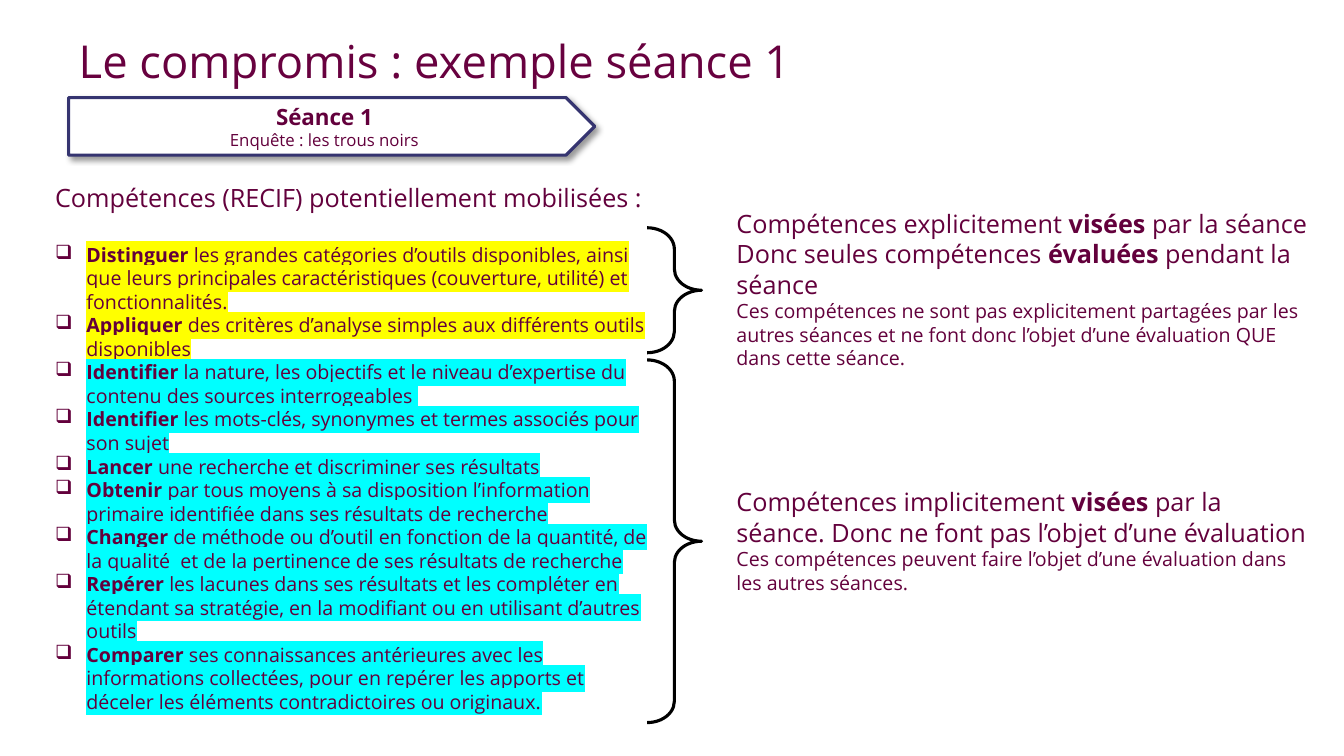
from lxml import etree
from pptx import Presentation
from pptx import util as u
from pptx.dml.color import RGBColor
from pptx.enum import shapes, text
from pptx.oxml.ns import qn

FONT = "Open Sans"
PLUM, TITLE_PLUM = "63003C", "68013F"
NAVY, BLACK, WHITE = "353470", "000000", "FFFFFF"
YELLOW, CYAN = "FFFF00", "00FFFF"

# Words between ** are bold
TARGETED = [
    "**Distinguer **les grandes catégories d’outils disponibles, ainsi que leurs "
    "principales caractéristiques (couverture, utilité) et fonctionnalités.",
    "**Appliquer **des critères d’analyse simples aux différents outils disponibles",
]
IMPLICIT = [
    "**Identifier **la nature, les objectifs et le niveau d’expertise du contenu "
    "des sources interrogeables ",
    "**Identifier **les mots-clés, synonymes et termes associés pour son sujet",
    "**Lancer **une recherche et discriminer ses résultats",
    "**Obtenir **par tous moyens à sa disposition l’information primaire identifiée "
    "dans ses résultats de recherche",
    "**Changer **de méthode ou d’outil en fonction de la quantité, de la qualité  et "
    "de la pertinence de ses résultats de recherche",
    "**Repérer **les lacunes dans ses résultats et les compléter en étendant sa "
    "stratégie, en la modifiant ou en utilisant d’autres outils",
    "**Comparer **ses connaissances antérieures avec les informations collectées, "
    "pour en repérer les apports et déceler les éléments contradictoires ou originaux.",
]
TARGETED_NOTE = [
    ("Compétences explicitement **visées** par la séance", 18),
    ("Donc seules compétences **évaluées** pendant la séance", 18),
    ("Ces compétences ne sont pas explicitement partagées par les autres séances et "
     "ne font donc l’objet d’une évaluation QUE dans cette séance.", 14),
]
IMPLICIT_NOTE = [
    ("Compétences implicitement **visées** par la séance. Donc ne font pas l’objet "
     "d’une évaluation", 18),
    ("Ces compétences peuvent faire l’objet d’une évaluation dans les autres "
     "séances.", 14),
]


def color(hex_value):
    return RGBColor.from_string(hex_value)


def add_xml(parent, tag, **attrs):
    return etree.SubElement(parent, qn(tag), attrs)


def cm_box(*lengths):
    return [u.Cm(n) for n in lengths]


def write(p, words, size, ink=PLUM, highlight=None):
    p.font.name, p.font.size = FONT, u.Pt(size)
    p.font.color.rgb = color(ink)
    for i, part in enumerate(words.split("**")):
        if part:
            r = p.add_run()
            r.text = part
            r.font.bold = i % 2 == 1
            if highlight:
                mark = add_xml(r.font._element, "a:highlight")
                add_xml(mark, "a:srgbClr", val=highlight)


def next_paragraph(tf):
    return tf.add_paragraph() if tf.paragraphs[0].runs else tf.paragraphs[0]


def add_text_box(s, box):
    tf = s.shapes.add_textbox(*cm_box(*box)).text_frame
    tf.word_wrap = True
    return tf


def add_title(s, box, words):
    sp = s.shapes.title
    sp.left, sp.top, sp.width, sp.height = cm_box(*box)
    tf = sp.text_frame
    tf.auto_size = text.MSO_AUTO_SIZE.NONE
    tf.vertical_anchor = text.MSO_ANCHOR.MIDDLE
    p = tf.paragraphs[0]
    p.alignment = text.PP_ALIGN.LEFT
    p.line_spacing = 0.9
    write(p, words, 32.4, TITLE_PLUM)


def add_session_arrow(s, box, name, subject):
    sp = s.shapes.add_shape(shapes.MSO_SHAPE.PENTAGON, *cm_box(*box))
    sp.fill.solid()
    sp.fill.fore_color.rgb = color(WHITE)
    sp.line.color.rgb = color(NAVY)
    sp.line.width = u.Pt(2.25)
    # Soft shadow towards the lower right
    sp.shadow.inherit = False
    effects = sp._element.spPr.find(qn("a:effectLst"))
    shadow = add_xml(effects, "a:outerShdw", blurRad=str(u.Pt(4)), dist=str(u.Pt(3)),
                     dir="2700000", algn="tl", rotWithShape="0")
    add_xml(add_xml(shadow, "a:srgbClr", val=BLACK), "a:alpha", val="40000")
    tf = sp.text_frame
    tf.vertical_anchor = text.MSO_ANCHOR.MIDDLE
    for words, size in ((f"**{name}**", 16), (subject, 12)):
        p = next_paragraph(tf)
        p.alignment = text.PP_ALIGN.CENTER
        write(p, words, size)


def add_skill_list(s, box, heading, groups):
    tf = add_text_box(s, box)
    p = next_paragraph(tf)
    p.space_after = u.Pt(21.5)
    write(p, heading, 18)
    indent = u.Cm(0.79)
    for skills, highlight in groups:
        for skill in skills:
            p = next_paragraph(tf)
            pPr = p._p.get_or_add_pPr()
            pPr.set("marL", str(indent))
            pPr.set("indent", str(-indent))
            add_xml(pPr, "a:buChar", char="❑")
            write(p, skill, 14, highlight=highlight)


def add_braced_note(s, box, note_height, lines):
    """Brace on the left of the box, note centred on its tip."""
    left, top, width, height = box
    brace_width, note_offset = 1.37, 2
    sp = s.shapes.add_shape(shapes.MSO_SHAPE.RIGHT_BRACE,
                            *cm_box(left, top, brace_width, height))
    sp.adjustments[0] = 0.39
    sp.fill.background()
    sp.line.color.rgb = color(BLACK)
    sp.line.width = u.Pt(2.25)
    sp.shadow.inherit = False
    tf = add_text_box(s, (left + note_offset, top + (height - note_height) / 2,
                          width - note_offset, note_height))
    for words, size in lines:
        write(next_paragraph(tf), words, size)


def main():
    prs = Presentation()
    prs.slide_width, prs.slide_height = u.Cm(33.87), u.Cm(19.05)
    s = prs.slides.add_slide(prs.slide_layouts[5])

    # Header
    add_title(s, (1.73, 0.84, 28.27, 1.55), "Le compromis : exemple séance 1")
    add_session_arrow(s, (1.73, 2.46, 13.26, 1.45),
                      "Séance 1", "Enquête : les trous noirs")

    # Skills on the left
    add_skill_list(s, (1.14, 4.47, 15.52, 13.77),
                   "Compétences (RECIF) potentiellement mobilisées :",
                   ((TARGETED, YELLOW), (IMPLICIT, CYAN)))

    # Comments on the right
    add_braced_note(s, (16.31, 5.74, 17.01, 3.15), 4.37, TARGETED_NOTE)
    add_braced_note(s, (16.31, 9.07, 17.01, 9.14), 3, IMPLICIT_NOTE)

    prs.save("out.pptx")


if __name__ == "__main__":
    main()
